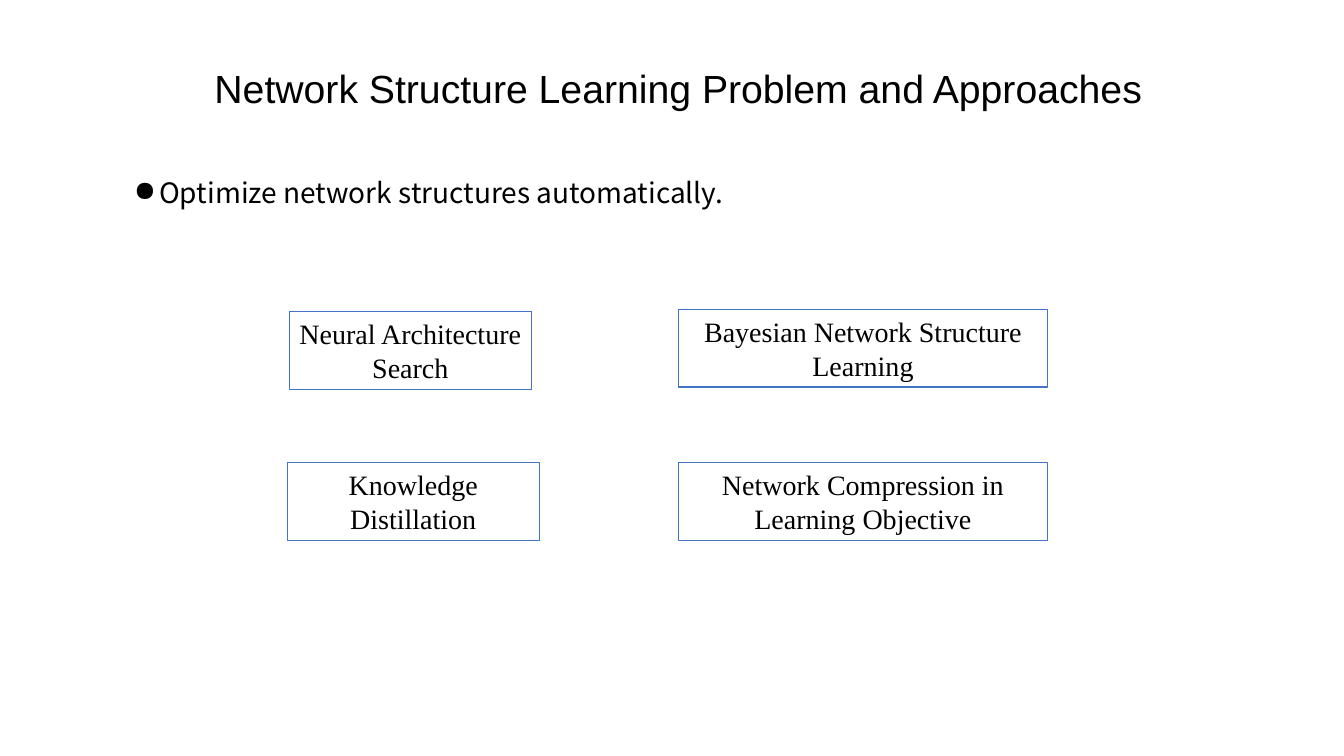
from dataclasses import dataclass

from lxml.etree import SubElement
from pptx import Presentation
from pptx.dml.color import RGBColor
from pptx.enum.shapes import MSO_SHAPE
from pptx.enum.text import MSO_ANCHOR, PP_ALIGN
from pptx.oxml.ns import qn
from pptx.util import Inches, Pt


@dataclass(frozen=True)
class Theme:
    ink: RGBColor = RGBColor(0, 0, 0)
    edge: RGBColor = RGBColor(0x44, 0x72, 0xC4)
    head: Pt = Pt(28)
    body: Pt = Pt(20)
    rule: Pt = Pt(0.75)
    sans: str = "Arial"
    text: str = "Noto Sans CJK SC"
    serif: str = "Times New Roman"


THEME = Theme()
COLS = (2.87, 2.4), (6.73, 3.66)
BOX_H = 0.77


def write(frame, text, size=THEME.body, font=THEME.serif,
          align=PP_ALIGN.CENTER, anchor=MSO_ANCHOR.TOP, before=0, lead=1.0):
    frame.word_wrap = True
    frame.vertical_anchor = anchor
    for i, line in enumerate(text.split("\n")):
        para = frame.paragraphs[0] if i == 0 else frame.add_paragraph()
        para.alignment = align
        para.line_spacing = lead
        para.space_before = Pt(before)
        run = para.add_run()
        run.text = line
        run.font.size = size
        run.font.name = font
        run.font.color.rgb = THEME.ink


def label(slide, text, left, top, width, height, **style):
    box = slide.shapes.add_textbox(
        Inches(left), Inches(top), Inches(width), Inches(height))
    write(box.text_frame, text, **style)
    return box.text_frame


def bullet(frame, mark="●", hang=0.25):
    for para in frame.paragraphs:
        props = para._p.get_or_add_pPr()
        props.set("marL", str(Inches(hang)))
        props.set("indent", str(-Inches(hang)))
        SubElement(props, qn("a:buChar")).set("char", mark)


def card(slide, text, left, top, width):
    box = slide.shapes.add_shape(
        MSO_SHAPE.RECTANGLE,
        Inches(left), Inches(top), Inches(width), Inches(BOX_H))
    box.shadow.inherit = False
    box.fill.background()
    box.line.color.rgb = THEME.edge
    box.line.width = THEME.rule
    write(box.text_frame, text)


def main():
    deck = Presentation()
    deck.slide_width = Inches(13.33)
    deck.slide_height = Inches(7.5)
    slide = deck.slides.add_slide(deck.slide_layouts[6])

    label(slide, "Network Structure Learning Problem and Approaches",
          1.88, 0.59, 9.69, 0.57, size=THEME.head, font=THEME.sans)
    point = label(slide, "Optimize network structures automatically.",
                  1.23, 1.73, 7.67, 0.57, font=THEME.text,
                  align=PP_ALIGN.JUSTIFY, before=10, lead=0.9)
    bullet(point)

    (left, slim), (right, wide) = COLS
    card(slide, "Neural Architecture \nSearch", left, 3.09, slim)
    card(slide, "Bayesian Network Structure Learning", right, 3.07, wide)
    card(slide, "Knowledge Distillation", left - 0.02, 4.59, slim + 0.1)
    card(slide, "Network Compression in Learning Objective",
         right, 4.59, wide)
    deck.save("out.pptx")


if __name__ == "__main__":
    main()
